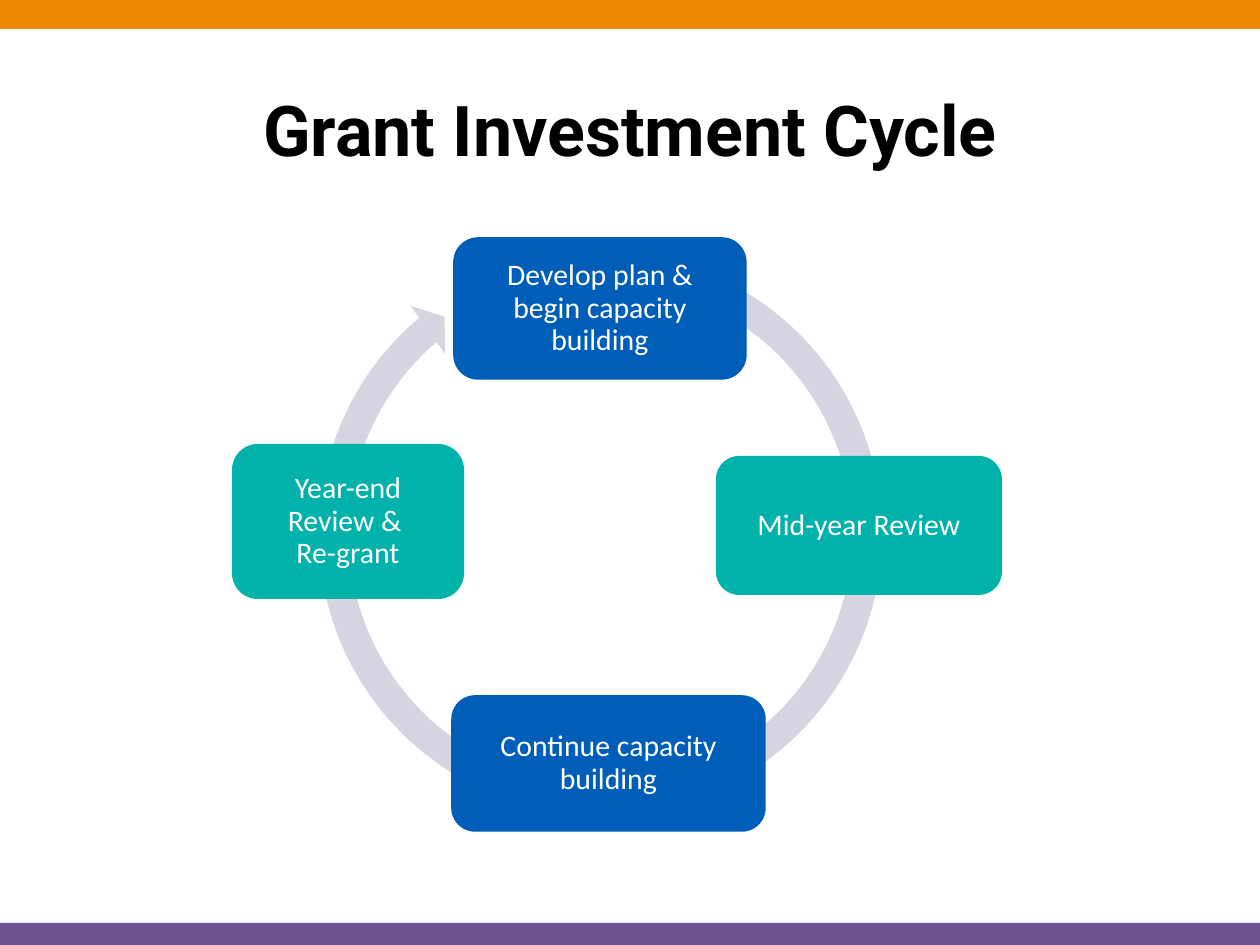
"""Build the grant investment cycle slide."""
from pptx import Presentation, util as u
from pptx.dml.color import RGBColor
from pptx.enum import shapes, text

PX = 914400 // 126
WIDTH, HEIGHT = 1260, 945
BLUE, TEAL, WHITE = "005EB8", "00B2A9", "FFFFFF"
TITLE = "Grant Investment Cycle"
BARS = [((0, 0, WIDTH, 29), "ED8B00"), ((0, 923, WIDTH, 22), "6F5091")]
RING = (304, 237, 593, 593)
RING_ADJUSTMENTS = [0.05, 2.73, 137.83, 174.17, 0.05]
STEPS = [
    ((455, 239, 290, 139), BLUE, ["Develop plan & begin capacity building"]),
    ((716, 456, 286, 139), TEAL, ["Mid-year Review"]),
    ((453, 697, 311, 133), BLUE, ["Continue capacity building"]),
    ((232, 444, 232, 155), TEAL, ["Year-end Review & ", "Re-grant"]),
]


def color(value):
    return RGBColor.from_string(value)


def place(area):
    return [value * PX for value in area]


def add_shape(page, kind, area, fill):
    shape = page.shapes.add_shape(kind, *place(area))
    shape.shadow.inherit = False
    shape.fill.solid()
    shape.fill.fore_color.rgb = color(fill)
    shape.line.fill.background()
    return shape


def write(box, lines, font, size, ink, spacing, inset, bold=False):
    frame = box.text_frame
    frame.word_wrap = True
    frame.vertical_anchor = text.MSO_ANCHOR.MIDDLE
    frame.margin_left = frame.margin_right = inset * PX
    frame.margin_top = frame.margin_bottom = inset * PX
    for index, line in enumerate(lines):
        para = frame.add_paragraph() if index else frame.paragraphs[0]
        para.alignment = text.PP_ALIGN.CENTER
        para.line_spacing = spacing
        span = para.add_run()
        span.text = line
        span.font.name, span.font.size, span.font.bold = font, u.Pt(size), bold
        span.font.color.rgb = color(ink)


def main():
    deck = Presentation()
    deck.slide_width, deck.slide_height = WIDTH * PX, HEIGHT * PX
    page = deck.slides.add_slide(deck.slide_layouts[6])
    kinds = shapes.MSO_SHAPE

    title = page.shapes.add_textbox(*place((63, 38, 1134, 165)))
    write(title, [TITLE], "Roboto", 40, "000000", 1.2, 6, bold=True)
    for area, fill in BARS:
        add_shape(page, kinds.RECTANGLE, area, fill)

    ring = add_shape(page, kinds.CIRCULAR_ARROW, RING, "D8D3E0")
    for index, value in enumerate(RING_ADJUSTMENTS):
        ring.adjustments[index] = value

    for area, fill, lines in STEPS:
        step = add_shape(page, kinds.ROUNDED_RECTANGLE, area, fill)
        if fill == BLUE:
            step.line.color.rgb = color(BLUE)
            step.line.width = u.Pt(2)
        write(step, lines, "Calibri", 17, WHITE, 0.9, 10)
    deck.save("out.pptx")


if __name__ == "__main__":
    main()
